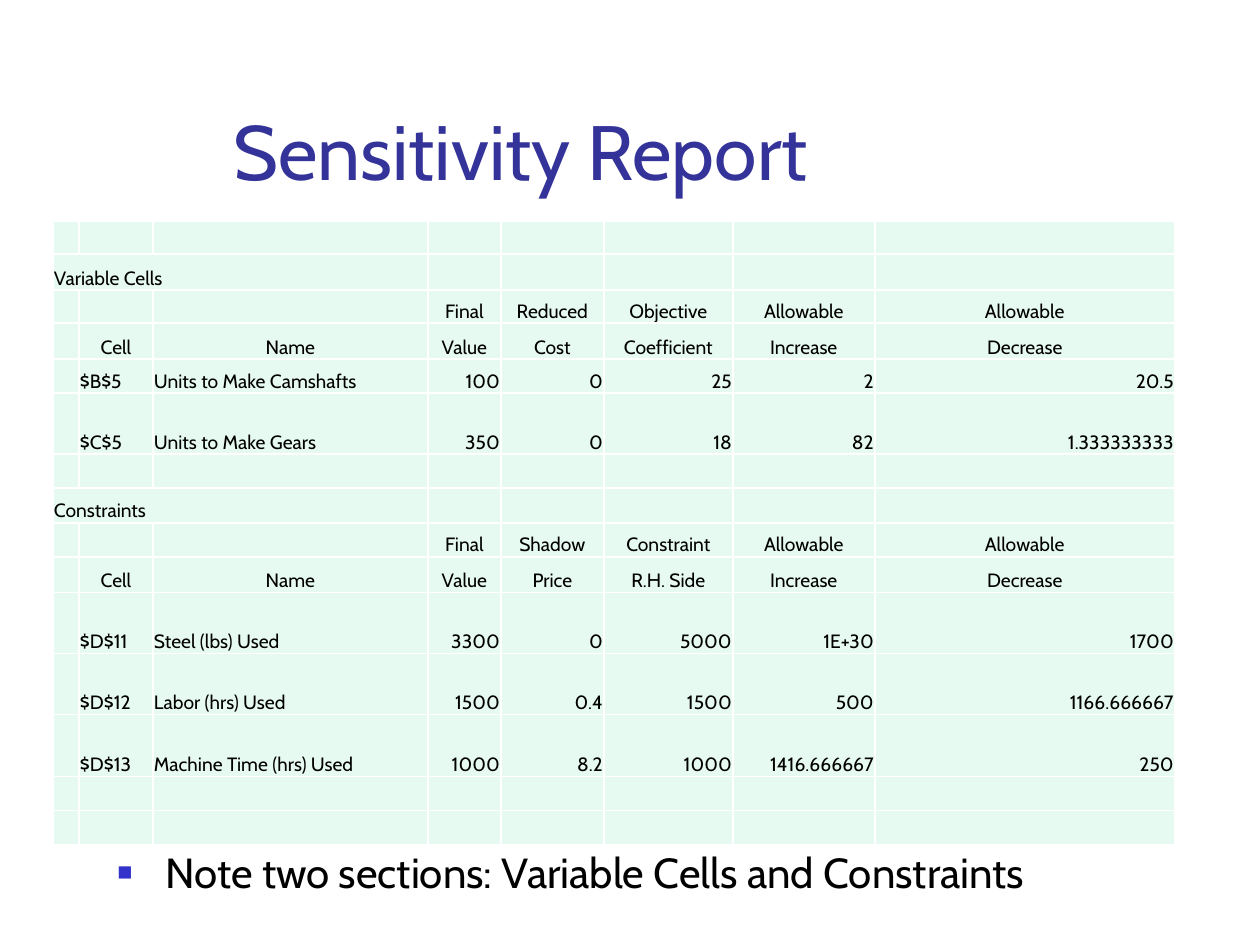
import pptx
import pptx.util
from lxml import etree
from pptx.dml.color import RGBColor
from pptx.enum.text import MSO_ANCHOR, PP_ALIGN
from pptx.oxml.ns import qn

NAVY = RGBColor(0x33, 0x33, 0x99)
BLUE = RGBColor(0x33, 0x33, 0xCC)
BLACK = RGBColor(0, 0, 0)
WHITE = RGBColor(255, 255, 255)
MINT = RGBColor(0xE7, 0xFA, 0xF1)

FONT = "Cabin"
PX_PER_INCH = 126
COLUMN_WIDTHS = [26, 74, 275, 73, 103, 129, 142, 300]
ROW_HEIGHTS = [33, 36, 33, 36, 34, 61, 34, 35, 34, 36, 61, 61, 62, 34, 34]

BLANK, SECTION, HEADER, RECORD = "blank", "section", "header", "record"
REPORT = [
    (BLANK, []),
    (SECTION, ["Variable Cells"]),
    (HEADER, ["", "", "", "Final", "Reduced", "Objective", "Allowable", "Allowable"]),
    (HEADER, ["", "Cell", "Name", "Value", "Cost", "Coefficient", "Increase", "Decrease"]),
    (RECORD, ["", "$B$5", "Units to Make Camshafts", "100", "0", "25", "2", "20.5"]),
    (RECORD, ["", "$C$5", "Units to Make Gears", "350", "0", "18", "82", "1.333333333"]),
    (BLANK, []),
    (SECTION, ["Constraints"]),
    (HEADER, ["", "", "", "Final", "Shadow", "Constraint", "Allowable", "Allowable"]),
    (HEADER, ["", "Cell", "Name", "Value", "Price", "R.H. Side", "Increase", "Decrease"]),
    (RECORD, ["", "$D$11", "Steel (lbs) Used", "3300", "0", "5000", "1E+30", "1700"]),
    (RECORD, ["", "$D$12", "Labor (hrs) Used", "1500", "0.4", "1500", "500", "1166.666667"]),
    (RECORD, ["", "$D$13", "Machine Time (hrs) Used", "1000", "8.2", "1000", "1416.666667", "250"]),
    (BLANK, []),
    (BLANK, []),
]


def px(length):
    return pptx.util.Inches(length / PX_PER_INCH)


def set_font(paragraph, size, color):
    paragraph.font.name = FONT
    paragraph.font.size = pptx.util.Pt(size)
    paragraph.font.color.rgb = color


def add_text(page, text, bounds, size, color, anchor=MSO_ANCHOR.TOP):
    box = page.shapes.add_textbox(*map(px, bounds))
    box.text_frame.word_wrap = True
    box.text_frame.vertical_anchor = anchor
    paragraph = box.text_frame.paragraphs[0]
    paragraph.text = text
    set_font(paragraph, size, color)
    return paragraph


def add_bullet(paragraph, hanging):
    properties = paragraph._p.get_or_add_pPr()
    properties.set("marL", str(px(hanging)))
    properties.set("indent", str(-px(hanging)))
    bullet_color = etree.Element(qn("a:buClr"))
    etree.SubElement(bullet_color, qn("a:srgbClr"), val=str(BLUE))
    marks = [
        bullet_color,
        etree.Element(qn("a:buSzPct"), val="60000"),
        etree.Element(qn("a:buFont"), typeface="Arial"),
        etree.Element(qn("a:buChar"), char="■"),
    ]
    for position, mark in enumerate(marks):
        properties.insert(position, mark)


def add_borders(cell):
    properties = cell._tc.get_or_add_tcPr()
    for side in ("a:lnL", "a:lnR", "a:lnT", "a:lnB"):
        line = etree.SubElement(properties, qn(side), w=str(pptx.util.Pt(1)))
        fill = etree.SubElement(line, qn("a:solidFill"))
        etree.SubElement(fill, qn("a:srgbClr"), val=str(WHITE))


def alignment(kind, column):
    if kind == HEADER:
        return PP_ALIGN.CENTER
    if kind == RECORD and column > 2:
        return PP_ALIGN.RIGHT
    return PP_ALIGN.LEFT


def fill_cell(cell, text, align):
    add_borders(cell)
    cell.fill.solid()
    cell.fill.fore_color.rgb = MINT
    cell.margin_left = cell.margin_right = cell.margin_top = px(1)
    cell.margin_bottom = 0
    cell.vertical_anchor = MSO_ANCHOR.BOTTOM
    paragraph = cell.text_frame.paragraphs[0]
    paragraph.alignment = align
    set_font(paragraph, 11, BLACK)
    if text:
        paragraph.text = text
    else:
        etree.SubElement(paragraph._p, qn("a:endParaRPr"), sz="1100")


def add_report(page, left, top):
    table = page.shapes.add_table(
        len(ROW_HEIGHTS), len(COLUMN_WIDTHS), px(left), px(top),
        px(sum(COLUMN_WIDTHS)), px(sum(ROW_HEIGHTS)),
    ).table
    table.first_row = table.horz_banding = False
    for column, width in zip(table.columns, COLUMN_WIDTHS):
        column.width = px(width)
    for row, height in zip(table.rows, ROW_HEIGHTS):
        row.height = px(height)
    for row_index, (kind, texts) in enumerate(REPORT):
        for column in range(len(COLUMN_WIDTHS)):
            text = texts[column] if column < len(texts) else ""
            fill_cell(table.cell(row_index, column), text, alignment(kind, column))
        if kind == SECTION:
            table.cell(row_index, 0).merge(table.cell(row_index, 2))


def main():
    deck = pptx.Presentation()
    deck.slide_width, deck.slide_height = px(1260), px(945)
    page = deck.slides.add_slide(deck.slide_layouts[6])
    add_text(page, "Sensitivity Report", (221, 0, 1073, 202), 44, NAVY, MSO_ANCHOR.BOTTOM)
    note = add_text(page, "Note two sections: Variable Cells and Constraints",
                    (105, 840, 1071, 68), 24, BLACK)
    add_bullet(note, 48)
    add_report(page, 53, 221)
    deck.save("out.pptx")


if __name__ == "__main__":
    main()
